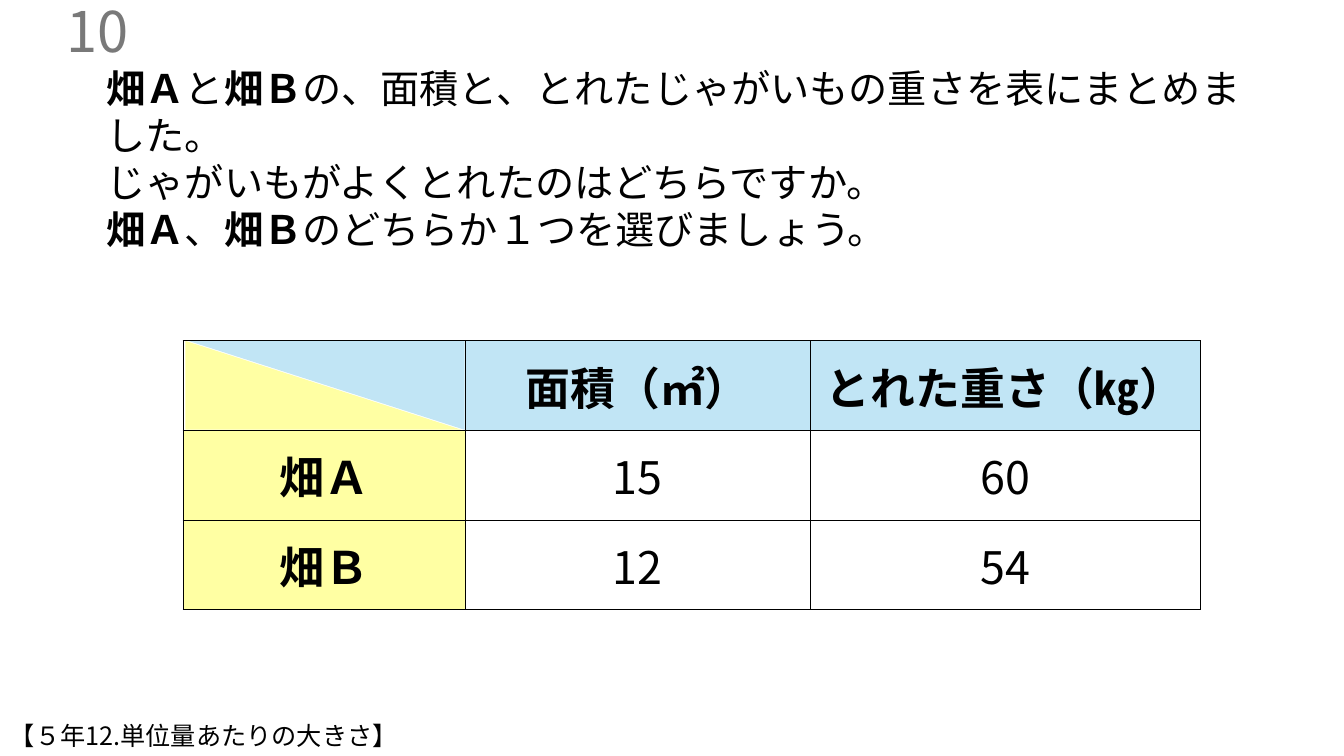
"""Build a quiz slide comparing the potato harvest of two fields."""
from lxml.etree import SubElement
from pptx import Presentation
from pptx.dml.color import RGBColor as RGB
from pptx.enum.shapes import MSO_SHAPE as SHAPE
from pptx.enum.text import MSO_ANCHOR as ANCHOR, PP_ALIGN as ALIGN
from pptx.oxml.ns import qn
from pptx.util import Cm, Pt

FONT = "Noto Sans CJK JP"
BLACK = RGB(0x00, 0x00, 0x00)
GRAY = RGB(0x79, 0x79, 0x79)
BLUE = RGB(0xC1, 0xE5, 0xF5)
YELLOW = RGB(0xFF, 0xFF, 0xA3)


def style(run, size, color=BLACK, bold=False):
    font = run.font
    font.size, font.bold, font.name = Pt(size), bold, FONT
    font.color.rgb = color
    SubElement(run._r.get_or_add_rPr(), qn("a:ea"), typeface=FONT)


def add_box(left, top, width, height):
    box = slide.shapes.add_textbox(Cm(left), Cm(top), Cm(width), Cm(height))
    box.text_frame.word_wrap = True
    return box.text_frame


deck = Presentation()
deck.slide_width, deck.slide_height = Cm(33.87), Cm(19.05)
slide = deck.slides.add_slide(deck.slide_layouts[6])

for left, turn, color in [(4.67, 0, YELLOW), (4.75, 180, BLUE)]:
    half = slide.shapes.add_shape(
        SHAPE.RIGHT_TRIANGLE, Cm(left), Cm(8.59), Cm(6.96), Cm(2.24))
    half.rotation = turn
    half.shadow.inherit = False
    half.fill.solid()
    half.fill.fore_color.rgb = color
    half.line.fill.background()

rows = [
    ["", "面積（㎡）", "とれた重さ（㎏）"],
    ["畑Ａ", "15", "60"],
    ["畑Ｂ", "12", "54"],
]
widths = [7.11, 8.69, 9.83]
table = slide.shapes.add_table(
    3, 3, Cm(4.62), Cm(8.59), Cm(sum(widths)), Cm(6.78)).table
table.first_row = table.horz_banding = False
for col, width in zip(table.columns, widths):
    col.width = Cm(width)
for r, row in enumerate(rows):
    table.rows[r].height = Cm(2.26)
    for c, text in enumerate(row):
        cell = table.cell(r, c)
        cell.vertical_anchor = ANCHOR.MIDDLE
        for side in ["lnL", "lnR", "lnT", "lnB"]:
            line = SubElement(cell._tc.get_or_add_tcPr(), qn(f"a:{side}"), w="12700")
            paint = SubElement(line, qn("a:solidFill"))
            SubElement(paint, qn("a:srgbClr"), val=str(BLACK))
        head = (r == 0) != (c == 0)
        if head:
            cell.fill.solid()
            cell.fill.fore_color.rgb = BLUE if r == 0 else YELLOW
        else:
            cell.fill.background()
        if text:
            cell.text_frame.text = text
            para = cell.text_frame.paragraphs[0]
            para.alignment = ALIGN.CENTER
            style(para.runs[0], 32, bold=head)

lines = [
    ["畑Ａ", "と", "畑Ｂ", "の、面積と、とれたじゃがいもの重さを表にまとめました。"],
    ["じゃがいもがよくとれたのはどちらですか。"],
    ["畑Ａ", "、", "畑Ｂ", "のどちらか１つを選びましょう。"],
]
frame = add_box(2.44, 1.5, 29.29, 5.05)
for i, parts in enumerate(lines):
    para = frame.add_paragraph() if i else frame.paragraphs[0]
    for part in parts:
        run = para.add_run()
        run.text = part
        style(run, 28, bold=part.startswith("畑"))

number = add_box(-4.14, 0.25, 7.62, 1.02)
number.vertical_anchor = ANCHOR.MIDDLE
number.text = "10"
number.paragraphs[0].alignment = ALIGN.RIGHT
style(number.paragraphs[0].runs[0], 40, GRAY)

unit = add_box(0, 18.03, 19.02, 1.02)
unit.text = "【５年12.単位量あたりの大きさ】"
style(unit.paragraphs[0].runs[0], 18)

deck.save("out.pptx")
